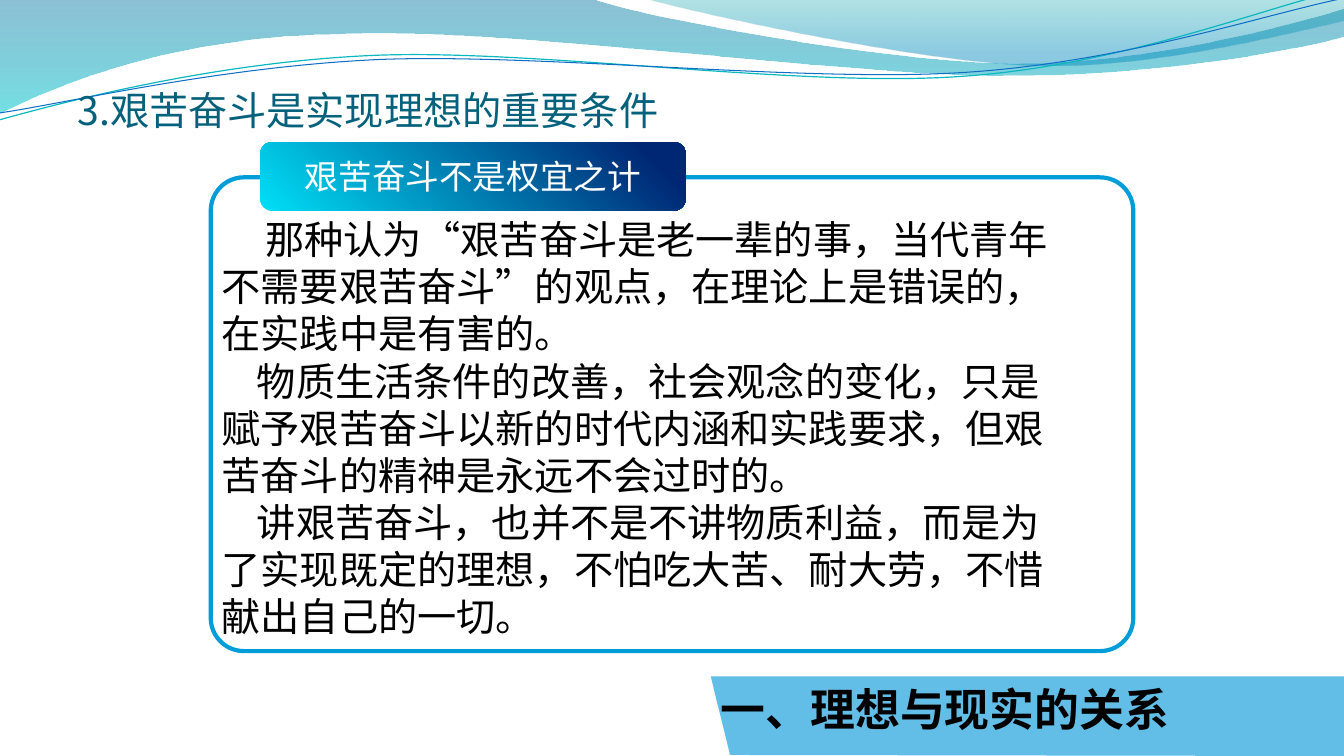
"""Build the slide on hard work as a condition for realising ideals."""
from lxml import etree
from pptx import Presentation
from pptx.dml.color import RGBColor
from pptx.enum.shapes import MSO_SHAPE
from pptx.enum.text import MSO_ANCHOR, PP_ALIGN
from pptx.oxml.ns import qn
from pptx.util import Inches, Pt

ROUND_RECT = MSO_SHAPE.ROUNDED_RECTANGLE
TOP, MIDDLE = MSO_ANCHOR.TOP, MSO_ANCHOR.MIDDLE
LEFT, CENTER = PP_ALIGN.LEFT, PP_ALIGN.CENTER
FONT = "Noto Sans CJK SC"
BLACK = RGBColor(0x00, 0x00, 0x00)
WHITE = RGBColor(0xFF, 0xFF, 0xFF)
TITLE_TEAL = RGBColor(0x04, 0x61, 0x7B)
FRAME_BLUE = RGBColor(0x00, 0x9D, 0xD9)
BANNER_BLUE = RGBColor(0x20, 0xA3, 0xDE)
WAVE_BLUE = RGBColor(0x00, 0x74, 0xA1)
WAVE_CYAN = RGBColor(0x00, 0xC6, 0xCF)
CREST_TEAL = RGBColor(0x00, 0xA1, 0xA9)
CREST_BLUE = RGBColor(0x00, 0x8B, 0xBF)
LINE_CYAN = RGBColor(0x0A, 0xB8, 0xBF)
LINE_BLUE = RGBColor(0x0F, 0x6F, 0xC6)
TAB_CYAN = RGBColor(0x00, 0xDF, 0xF6)
TAB_NAVY = RGBColor(0x00, 0x27, 0x74)

TITLE = "3.艰苦奋斗是实现理想的重要条件"
TAB = "艰苦奋斗不是权宜之计"
BANNER = "一、理想与现实的关系"
BODY = [
    (0.43, "那种认为“艰苦奋斗是老一辈的事，当代青年不需要艰苦奋斗”的观点，在理论上是错误的，在实践中是有害的。"),
    (0.35, "物质生活条件的改善，社会观念的变化，只是赋予艰苦奋斗以新的时代内涵和实践要求，但艰苦奋斗的精神是永远不会过时的。"),
    (0.35, "讲艰苦奋斗，也并不是不讲物质利益，而是为了实现既定的理想，不怕吃大苦、耐大劳，不惜献出自己的一切。"),
]

WAVES = [
    ([(0, 0), (5.87, -0.01), (6.34, 0.17, 8.85, 0.63, 10.11, 0.63),
      (11.38, 0.63, 12.78, 0.26, 13.33, 0.09), (13.35, 0.36),
      (13.11, 0.44, 11.6, 0.76, 9.94, 0.75), (8.29, 0.75, 5.09, 0.28, 3.43, 0.34),
      (1.72, 0.36, 0.61, 0.83, -0.01, 1.13), (0, 0)],
     [(0, WAVE_BLUE, 45), (1, WAVE_CYAN, 55)]),
    ([(6.39, -0.01), (6.79, 0.11, 9.09, 0.62, 10.25, 0.65),
      (11.41, 0.69, 12.82, 0.32, 13.33, 0.21), (13.33, 0), (6.39, -0.01)],
     [(0, CREST_TEAL, 30), (0.8, CREST_BLUE, 45)]),
]
WAVE_LINES = [
    ([(-0.01, 1.19), (0.64, 1.01, 2.11, 0.62, 3.69, 0.55),
      (5.27, 0.48, 7.9, 0.87, 9.5, 0.76), (11.1, 0.66, 12.52, 0.08, 13.31, -0.1)],
     LINE_CYAN, 0.85),
    ([(0, 1.12), (0.63, 1.03, 2.18, 0.66, 3.78, 0.59),
      (5.37, 0.53, 7.96, 0.82, 9.55, 0.72), (11.15, 0.62, 12.55, 0.14, 13.34, -0.02)],
     LINE_BLUE, 0.75),
]
BANNER_OUTLINE = [(7.05, 6.71), (13.33, 6.71), (13.33, 7.5), (7.24, 7.49),
                  (7.18, 7.23, 7.11, 6.97, 7.05, 6.71)]


def clear(sp):
    """Remove the shadow, fill and line."""
    sp.shadow.inherit = False
    sp.fill.background()
    sp.line.fill.background()
    return sp


def add_outline(s, segments, close=True):
    """Draw a freeform; six-number segments are cubic curves."""
    ends = [(Inches(seg[-2]), Inches(seg[-1])) for seg in segments]
    builder = s.shapes.build_freeform(*ends[0])
    builder.add_line_segments(ends[1:], close=close)
    sp = clear(builder.convert_to_shape())
    lines = list(sp._element.iter(qn("a:lnTo")))
    for line, seg in zip(lines, segments[1:]):
        if len(seg) == 6:
            curve = etree.Element(qn("a:cubicBezTo"))
            for x, y in zip(seg[::2], seg[1::2]):
                pt = etree.SubElement(curve, qn("a:pt"))
                pt.set("x", str(Inches(x) - sp.left))
                pt.set("y", str(Inches(y) - sp.top))
            line.getparent().replace(line, curve)
    return sp


def add_box(s, x, y, w, h, radius):
    """Draw an unfilled rounded rectangle."""
    sp = s.shapes.add_shape(ROUND_RECT, Inches(x), Inches(y), Inches(w), Inches(h))
    sp.adjustments[0] = radius
    return clear(sp)


def set_alpha(sp, percents):
    """Set the opacity of each fill colour in order."""
    for clr, percent in zip(sp.fill._xPr.iter(qn("a:srgbClr")), percents):
        etree.SubElement(clr, qn("a:alpha")).set("val", str(percent * 1000))


def set_gradient(sp, stops, angle):
    """Fill with a two-stop linear gradient."""
    sp.fill.gradient()
    sp.fill.gradient_angle = angle
    for stop, (position, color, _) in zip(sp.fill.gradient_stops, stops):
        stop.position = position
        stop.color.rgb = color
    set_alpha(sp, [alpha for _, _, alpha in stops])


def write(sp, paragraphs, size, color, anchor=TOP, align=LEFT, bold=False):
    """Write (first-line indent, text) paragraphs."""
    tf = sp.text_frame
    tf.word_wrap = True
    tf.vertical_anchor = anchor
    for i, (indent, text) in enumerate(paragraphs):
        p = tf.add_paragraph() if i else tf.paragraphs[0]
        p.alignment = align
        if indent:
            p._p.get_or_add_pPr().set("indent", str(Inches(indent)))
        r = p.add_run()
        r.text = text
        r.font.name = FONT
        r.font.size = Pt(size)
        r.font.bold = bold
        r.font.color.rgb = color
        etree.SubElement(r._r.get_or_add_rPr(), qn("a:ea")).set("typeface", FONT)


def add_text(s, x, y, w, h):
    """Add an empty text box."""
    return s.shapes.add_textbox(Inches(x), Inches(y), Inches(w), Inches(h))


def main():
    """Build and save the slide."""
    prs = Presentation()
    prs.slide_width, prs.slide_height = Inches(13.33), Inches(7.5)
    s = prs.slides.add_slide(prs.slide_layouts[6])

    for segments, stops in WAVES:
        set_gradient(add_outline(s, segments), stops, 270)
    for segments, color, width in WAVE_LINES:
        sp = add_outline(s, segments, close=False)
        sp.line.color.rgb = color
        sp.line.width = Pt(width)

    write(add_text(s, 0.67, 0.77, 12, 0.64), [(0, TITLE)], 28, TITLE_TEAL, MIDDLE)
    write(add_text(s, 2.1, 2.09, 8.69, 4.25), BODY, 28, BLACK)

    banner = add_outline(s, BANNER_OUTLINE)
    banner.fill.solid()
    banner.fill.fore_color.rgb = BANNER_BLUE
    set_alpha(banner, [70])
    write(banner, [(0, BANNER)], 32, BLACK, bold=True)

    frame = add_box(s, 2.09, 1.76, 9.15, 4.7, 0.07)
    frame.line.color.rgb = FRAME_BLUE
    frame.line.width = Pt(3)

    tab = add_box(s, 2.58, 1.41, 4.22, 0.68, 0.17)
    set_gradient(tab, [(0, TAB_CYAN, 100), (0.9, TAB_NAVY, 100)], 45)
    write(tab, [(0, TAB)], 24, WHITE, MIDDLE, CENTER)

    prs.save("out.pptx")


if __name__ == "__main__":
    main()
